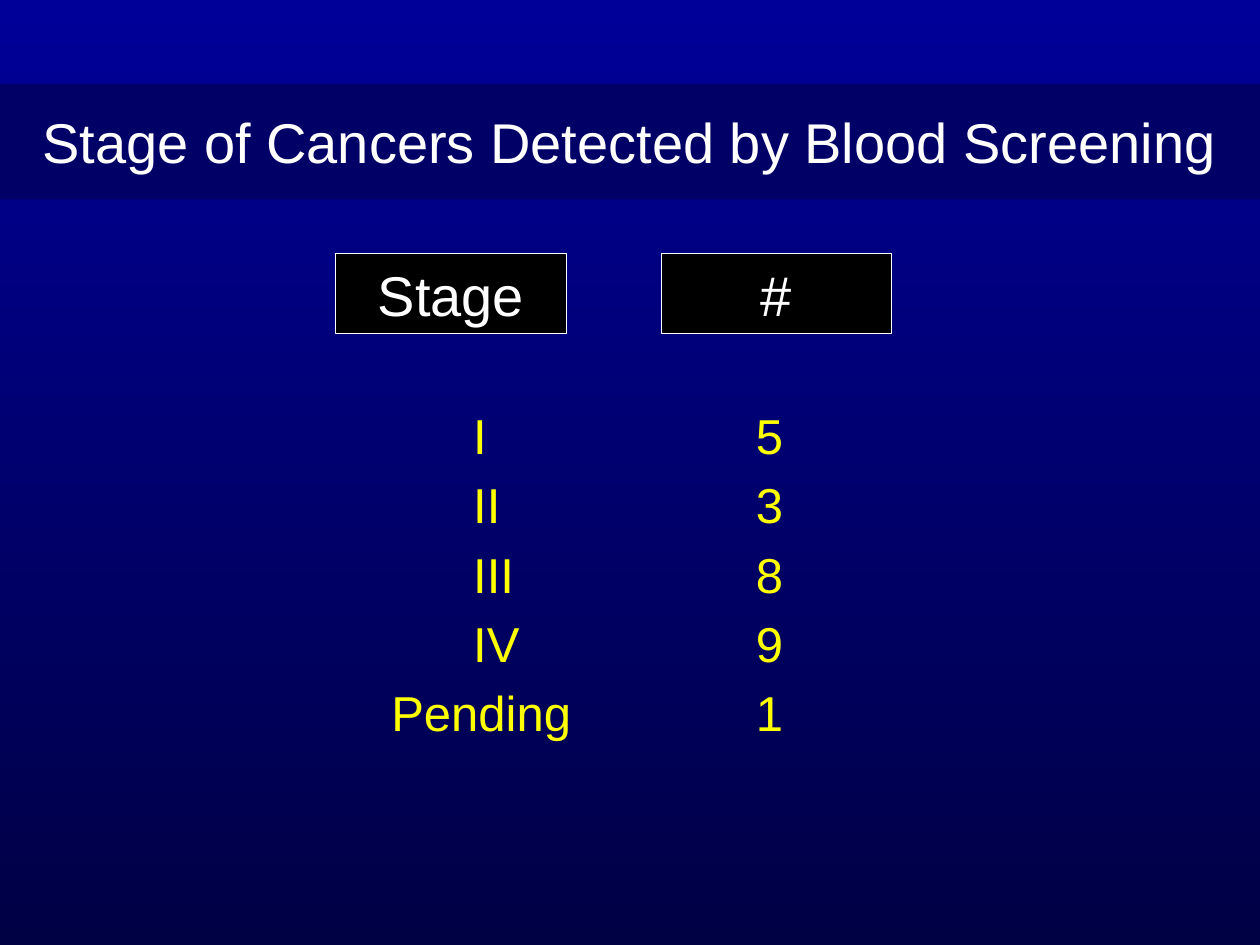
from lxml import etree
from pptx import Presentation
from pptx.dml.color import RGBColor
from pptx.enum.shapes import MSO_SHAPE
from pptx.enum.text import MSO_ANCHOR, PP_ALIGN
from pptx.oxml.ns import qn
from pptx.util import Cm, Pt

RECTANGLE = MSO_SHAPE.RECTANGLE
MIDDLE = MSO_ANCHOR.MIDDLE
CENTER = PP_ALIGN.CENTER

WHITE = RGBColor(0xFF, 0xFF, 0xFF)
BLACK = RGBColor(0x00, 0x00, 0x00)
YELLOW = RGBColor(0xFF, 0xFF, 0x00)
BAND_BLUE = RGBColor(0x00, 0x00, 0x66)
TOP_BLUE = RGBColor(0x00, 0x00, 0x99)
BOTTOM_BLUE = RGBColor(0x00, 0x00, 0x44)


def set_font(paragraph, size, color):
    paragraph.font.name = "Arial"
    paragraph.font.size = Pt(size)
    paragraph.font.color.rgb = color


def add_box(slide, text, left, top, width, height, color):
    shape = slide.shapes.add_shape(RECTANGLE, Cm(left), Cm(top), Cm(width), Cm(height))
    shape.shadow.inherit = False
    shape.fill.solid()
    shape.fill.fore_color.rgb = color
    shape.text_frame.vertical_anchor = MIDDLE
    paragraph = shape.text_frame.paragraphs[0]
    paragraph.text = text
    paragraph.alignment = CENTER
    set_font(paragraph, 32, WHITE)
    return shape


presentation = Presentation()
presentation.slide_width = Cm(25.4)
presentation.slide_height = Cm(19.05)
slide = presentation.slides.add_slide(presentation.slide_layouts[6])

# Background, light at the top
background = slide.background.fill
background.gradient()
background.gradient_angle = 270
for stop, color in zip(background.gradient_stops, (TOP_BLUE, BOTTOM_BLUE)):
    stop.color.rgb = color

# Rows of stage and count, aligned by tab stops
rows = [("I", 5), ("II", 3), ("III", 8), ("IV", 9), ("Pending", 1)]
text_box = slide.shapes.add_textbox(Cm(7.37), Cm(8.05), Cm(12.7), Cm(7.09))
text_frame = text_box.text_frame
text_frame.word_wrap = True
for index, (stage, count) in enumerate(rows):
    paragraph = text_frame.paragraphs[0] if index == 0 else text_frame.add_paragraph()
    paragraph.text = f"\t{stage}\t{count}"
    paragraph.space_before = Pt(6)
    stage_tab = 0.27 if stage == "Pending" else 1.92
    tab_list = etree.SubElement(paragraph._p.get_or_add_pPr(), qn("a:tabLst"))
    for position in (stage_tab, 7.62):
        etree.SubElement(tab_list, qn("a:tab"), pos=str(Cm(position)), algn="l")
    set_font(paragraph, 28, YELLOW)

# Column headings
for text, left in (("Stage", 6.77), ("#", 13.33)):
    heading = add_box(slide, text, left, 5.11, 4.65, 1.62, BLACK)
    heading.line.color.rgb = WHITE
    heading.line.width = Pt(0.75)

# Title band
band = add_box(slide, "Stage of Cancers Detected by Blood Screening",
               0, 1.69, 25.4, 2.33, BAND_BLUE)
band.line.fill.background()
band.text_frame.word_wrap = False

presentation.save("out.pptx")
